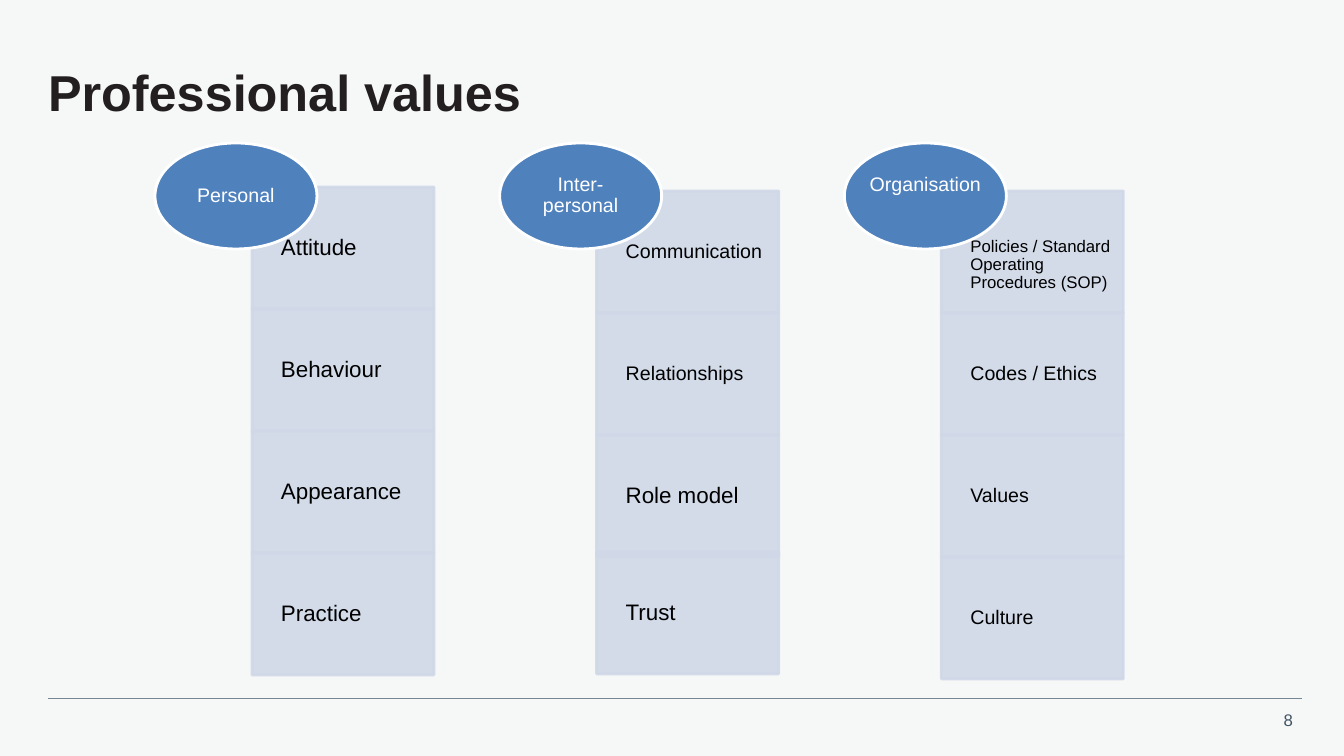
from lxml.etree import SubElement
from pptx import Presentation
from pptx.dml.color import RGBColor
from pptx.enum.shapes import MSO_CONNECTOR, MSO_SHAPE
from pptx.enum.text import MSO_ANCHOR, PP_ALIGN
from pptx.oxml.ns import qn
from pptx.util import Pt

TITLE = "Professional values"
PAGE_NUMBER = "8"
# heading, its bottom inset, top of first cell, top of last cell, cells as (label, size, top inset)
COLUMNS = [
    ("Personal", 0, 187, 553,
     [("Attitude", 16, 0), ("Behaviour", 16, 0), ("Appearance", 16, 0), ("Practice", 16, 0)]),
    ("Inter-personal", 0, 191, 552,
     [("Communication", 14, 0), ("Relationships", 14, 0), ("Role model", 16, 0), ("Trust", 16, 0)]),
    ("Organisation", 22, 191, 557,
     [("Policies / Standard Operating Procedures (SOP)", 12, 26), ("Codes / Ethics", 14, 0),
      ("Values", 14, 0), ("Culture", 14, 0)]),
]
FIRST_LEFT, COLUMN_STEP = 252, 344.7
CELL_WIDTH, CELL_HEIGHT = 182, 122
OVAL_SHIFT, OVAL_TOP, OVAL_WIDTH, OVAL_HEIGHT = 97, 143, 162, 106


def px(length):
    return round(length * 914400 / 100.8)


def paint(color_format, color, alpha=100):
    color_format.rgb = RGBColor.from_string(color)
    if alpha < 100:
        node = color_format._xFill.find(qn("a:srgbClr"))
        SubElement(node, qn("a:alpha")).set("val", str(alpha * 1000))


def write(box, text, size, color, align=PP_ALIGN.LEFT, insets=(0, 0, 0, 0), bold=False, wrap=True):
    """Set one line of text; insets are left, top, right, bottom in px."""
    left, top, right, bottom = map(px, insets)
    frame = box.text_frame
    frame.text = text
    frame_format = dict(margin_left=left, margin_top=top, margin_right=right, margin_bottom=bottom,
                        vertical_anchor=MSO_ANCHOR.MIDDLE, word_wrap=wrap)
    for name, value in frame_format.items():
        setattr(frame, name, value)
    para = frame.paragraphs[0]
    para.alignment = align
    para.line_spacing = 0.9
    for name, value in dict(name="Arial", size=Pt(size), bold=bold).items():
        setattr(para.font, name, value)
    paint(para.font.color, color)


def add_box(page, kind, area, fill, line, alpha=100):
    box = page.shapes.add_shape(kind, *map(px, area))
    box.shadow.inherit = False
    box.fill.solid()
    paint(box.fill.fore_color, fill, alpha)
    box.line.fill.solid()
    paint(box.line.fill.fore_color, line, alpha)
    box.line.width = Pt(2)
    return box


def add_column(page, left, heading, heading_inset, first_top, last_top, cells):
    for row, (label, size, top_inset) in enumerate(cells):
        top = last_top if row == len(cells) - 1 else first_top + row * CELL_HEIGHT
        cell = add_box(page, MSO_SHAPE.RECTANGLE, (left, top, CELL_WIDTH, CELL_HEIGHT),
                       "D0D8E8", "D0D8E8", 90)
        write(cell, label, size, "000000", insets=(29, top_inset, 9, 0))
    oval = add_box(page, MSO_SHAPE.OVAL, (left - OVAL_SHIFT, OVAL_TOP, OVAL_WIDTH, OVAL_HEIGHT),
                   "4F81BD", "FFFFFF")
    write(oval, heading, 14, "FFFFFF", PP_ALIGN.CENTER, (0, 0, 0, heading_inset))


def add_footer(page):
    rule = page.shapes.add_connector(MSO_CONNECTOR.STRAIGHT, px(48), px(698), px(1302), px(698))
    paint(rule.line.color, "768692")
    rule.line.width = Pt(0.5)
    SubElement(rule._element.spPr, qn("a:effectLst"))
    number = page.shapes.add_textbox(px(1262), px(706), px(41), px(30))
    write(number, PAGE_NUMBER, 12, "425563", PP_ALIGN.RIGHT, (10, 5, 10, 5), wrap=False)


def main():
    deck = Presentation()
    deck.slide_width, deck.slide_height = px(1344), px(756)
    page = deck.slides.add_slide(deck.slide_layouts[5])
    page.background.fill.solid()
    paint(page.background.fill.fore_color, "F6F8F8")
    add_footer(page)
    title = page.shapes.title
    title.left, title.top, title.width, title.height = map(px, (48, 47, 1257, 96))
    write(title, TITLE, 36, "231F20", bold=True)
    for index, column in enumerate(COLUMNS):
        add_column(page, FIRST_LEFT + index * COLUMN_STEP, *column)
    deck.save("out.pptx")


if __name__ == "__main__":
    main()
